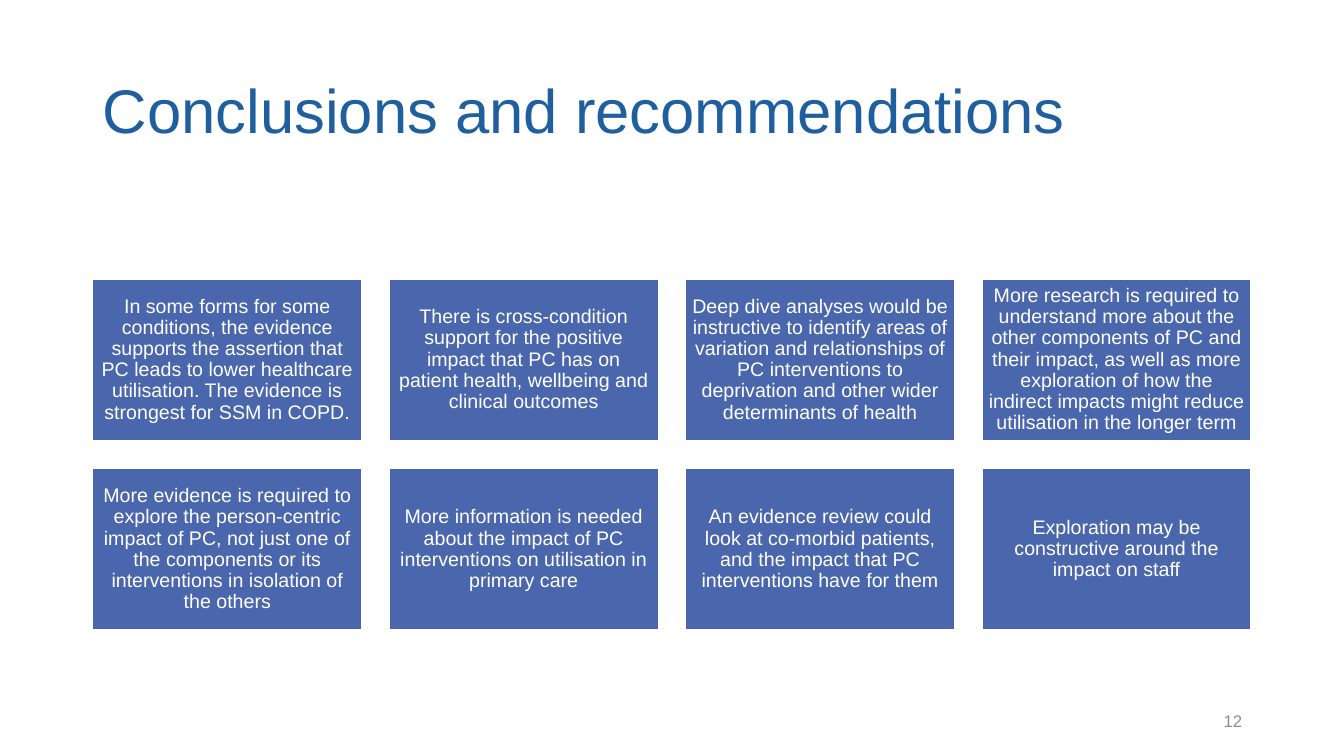
from pptx import Presentation
from pptx.dml.color import RGBColor
from pptx.enum import shapes, text
from pptx.util import Inches, Pt

COLORS = {"title": "1F5FA0", "card": "4A66AC", "white": "FFFFFF", "number": "8C8C8C"}
FONT = "Arial"

CONCLUSIONS = [
    "In some forms for some conditions, the evidence supports the assertion that PC leads to "
    "lower healthcare utilisation. The evidence is strongest for SSM in COPD.",
    "There is cross-condition support for the positive impact that PC has on patient health, "
    "wellbeing and clinical outcomes",
    "Deep dive analyses would be instructive to identify areas of variation and relationships "
    "of PC interventions to deprivation and other wider determinants of health",
    "More research is required to understand more about the other components of PC and their "
    "impact, as well as more exploration of how the indirect impacts might reduce utilisation "
    "in the longer term",
    "More evidence is required to explore the person-centric impact of PC, not just one of the "
    "components or its interventions in isolation of the others",
    "More information is needed about the impact of PC interventions on utilisation in primary care",
    "An evidence review could look at co-morbid patients, and the impact that PC interventions "
    "have for them",
    "Exploration may be constructive around the impact on staff",
]


def rgb(name):
    return RGBColor.from_string(COLORS[name])


def write(sp, content, size, color, align="LEFT", spacing=1.0, inset_x=0.1, inset_y=0.05):
    """Put one vertically centred paragraph into a shape."""
    tf = sp.text_frame
    tf.word_wrap = True
    tf.vertical_anchor = text.MSO_ANCHOR.MIDDLE
    tf.margin_left = tf.margin_right = Inches(inset_x)
    tf.margin_top = tf.margin_bottom = Inches(inset_y)
    p = tf.paragraphs[0]
    p.alignment = getattr(text.PP_ALIGN, align)
    p.line_spacing = spacing
    r = p.add_run()
    r.text = content
    r.font.name = FONT
    r.font.size = Pt(size)
    r.font.color.rgb = rgb(color)


class SlideBuilder:
    def __init__(self, prs):
        self.s = prs.slides.add_slide(prs.slide_layouts[6])

    def label(self, box, content, **fmt):
        sp = self.s.shapes.add_textbox(*map(Inches, box))
        write(sp, content, **fmt)

    def card(self, box, content):
        sp = self.s.shapes.add_shape(shapes.MSO_SHAPE.RECTANGLE, *map(Inches, box))
        sp.shadow.inherit = False
        sp.fill.solid()
        sp.fill.fore_color.rgb = rgb("card")
        sp.line.color.rgb = rgb("white")
        sp.line.width = Pt(1)
        write(sp, content, size=14, color="white", align="CENTER", spacing=0.9,
              inset_x=0.06, inset_y=0.06)


def main():
    prs = Presentation()
    prs.slide_width, prs.slide_height = Inches(13.33), Inches(7.5)
    slide = SlideBuilder(prs)

    # Title
    slide.label((0.92, 0.4, 11.5, 1.45), "Conclusions and recommendations",
                size=44, color="title", spacing=0.9)

    # Grid of conclusions
    columns, left, top, width, height = 4, 0.92, 2.77, 2.67, 1.6
    step_x, step_y = 2.94, 1.88
    for i, conclusion in enumerate(CONCLUSIONS):
        row, col = divmod(i, columns)
        slide.card((left + col * step_x, top + row * step_y, width, height), conclusion)

    # Slide number
    slide.label((9.42, 6.95, 3, 0.4), "12", size=12, color="number", align="RIGHT")

    prs.save("out.pptx")


if __name__ == "__main__":
    main()
